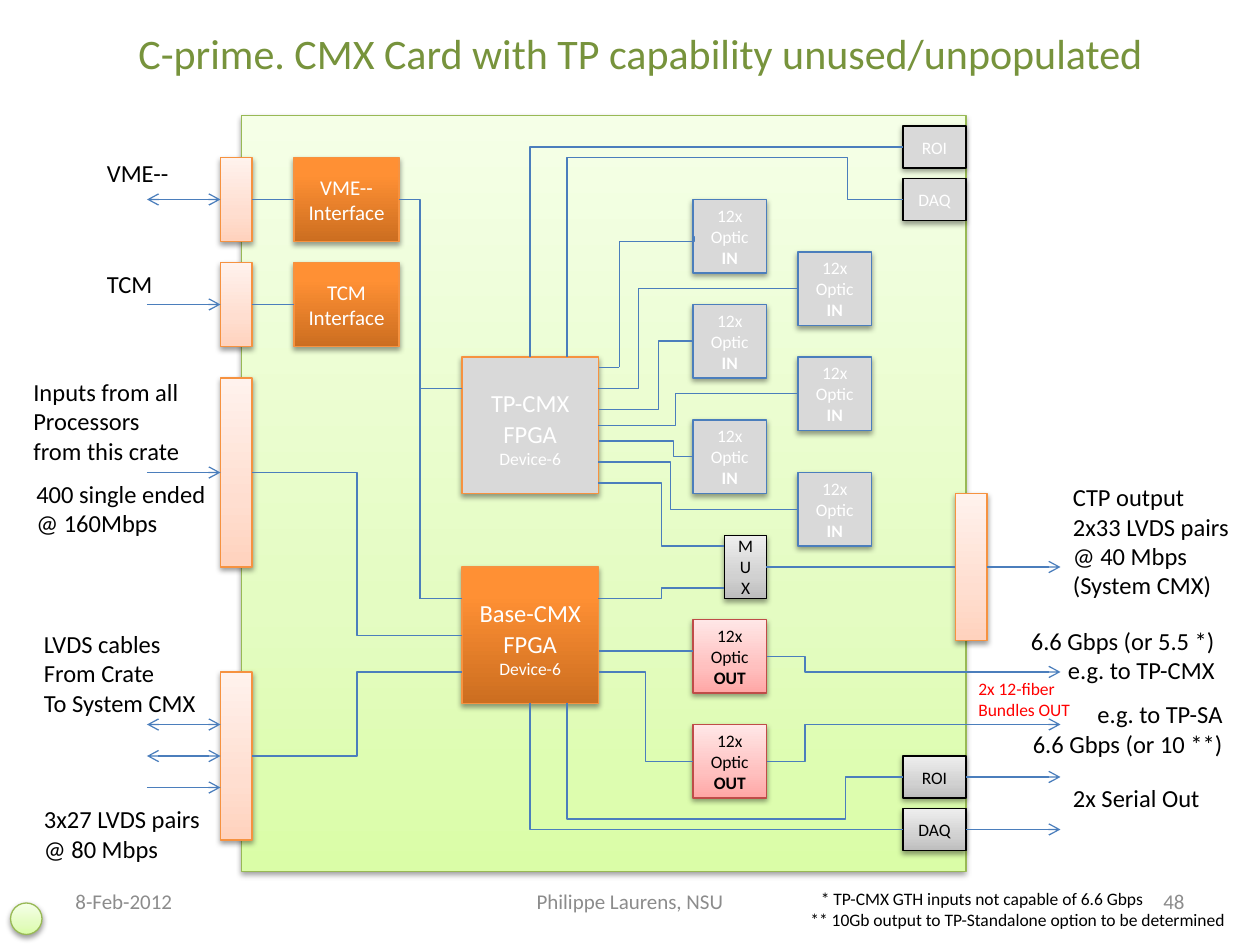
from lxml import etree
from pptx import Presentation
from pptx.dml.color import RGBColor
from pptx.enum.shapes import MSO_CONNECTOR, MSO_SHAPE
from pptx.enum.text import MSO_ANCHOR, MSO_AUTO_SIZE, PP_ALIGN
from pptx.oxml.ns import qn
from pptx.util import Pt

COLORS = {
    "wire": "4B7EBC", "orange": "F69240", "green": "98B955", "red": "BF4C48",
    "black": "000000", "white": "FFFFFF", "unused": "D9D9D9",
    "title": "77933C", "note": "FF0000", "footer": "8C8C8C",
}
GRADIENTS = {
    "board": [(0, "DAFDA7"), (35, "E4FCC2"), (100, "F5FFE7")],
    "port": [(0, "FFD2BD"), (35, "FFDED0"), (100, "FFF2ED")],
    "active": [(0, "CC6E20"), (80, "FF9034"), (100, "FF9136")],
    "output": [(0, "FFA6A5"), (35, "FFC0BF"), (100, "FFE7E7")],
    "link": [(0, "BDBDBD"), (35, "D1D1D1"), (100, "EEEEEE")],
}
LEFT, CENTER, RIGHT = PP_ALIGN.LEFT, PP_ALIGN.CENTER, PP_ALIGN.RIGHT

deck = Presentation()
deck.slide_width, deck.slide_height = Pt(720), Pt(540)
page = deck.slides.add_slide(deck.slide_layouts[6])


def write(frame, lines, color):
    """Fill a frame; each line is (alignment, [(text, size, bold), ...])."""
    for index, (align, spans) in enumerate(lines):
        para = frame.paragraphs[0] if index == 0 else frame.add_paragraph()
        para.alignment = align
        for text, size, bold in spans:
            span = para.add_run()
            span.text = text
            span.font.name, span.font.size, span.font.bold = "Calibri", Pt(size), bold
            span.font.color.rgb = RGBColor.from_string(COLORS[color])


def style_wire(wire, ends):
    """Colour a connector, drop its shadow and add open arrowheads."""
    wire.line.color.rgb = RGBColor.from_string(COLORS["wire"])
    wire.line.width = Pt(0.75)
    properties = wire._element.spPr
    etree.SubElement(properties, qn("a:effectLst"))
    for end in ends:
        etree.SubElement(properties.find(qn("a:ln")), qn("a:" + end), type="arrow")


# Contents of the boxes
optic_in, optic_out = [
    [(CENTER, [("12x Optic ", 10, False), (name, 10, True)])] for name in ("IN", "OUT")]
fpga_tp, fpga_base = [
    [(CENTER, [(name, 14, False), (" ", 18, False), ("FPGA", 14, False)]),
     (CENTER, [("Device-6", 10, False)])] for name in ("TP-CMX", "Base-CMX")]
vme, tcm = [[(CENTER, [(name + " Interface", 12, False)])] for name in ("VME--", "TCM")]
mux, roi, daq = [[(CENTER, [(name, 10, False)])] for name in ("MUX", "ROI", "DAQ")]

# Boxes: left, top, width, height, fill, line, text colour, lines
boxes = [(138, 66, 414, 432, "board", "green", "black", [])]
boxes += [(left, top, 18, height, "port", "orange", "black", [])
          for left, top, height in [(126, 90, 48), (126, 150, 48), (126, 216, 108),
                                    (126, 384, 96), (546, 282, 84)]]
boxes += [
    (168, 90, 60, 48, "active", "orange", "white", vme),
    (168, 150, 60, 48, "active", "orange", "white", tcm),
    (264, 204, 78, 78, "unused", "orange", "white", fpga_tp),
    (264, 324, 78, 78, "active", "orange", "white", fpga_base),
    (414, 306, 24, 36, "link", "black", "black", mux),
    (516, 72, 36, 24, "unused", "black", "white", roi),
    (516, 102, 36, 24, "unused", "black", "white", daq),
    (516, 432, 36, 24, "link", "black", "black", roi),
    (516, 462, 36, 24, "link", "black", "black", daq),
]
boxes += [(left, top, 42, 42, "unused", "wire", "white", optic_in)
          for left, top in [(396, 114), (396, 174), (396, 240),
                            (456, 144), (456, 204), (456, 270)]]
boxes += [(396, top, 42, 42, "output", "red", "black", optic_out) for top in (354, 414)]
boxes.append((6, 516, 18, 18, "board", "green", "black", []))  # corner dot

side_middles = {}
for left, top, width, height, fill, line, ink, lines in boxes:
    kind = MSO_SHAPE.OVAL if left == 6 else MSO_SHAPE.RECTANGLE
    box = page.shapes.add_shape(kind, Pt(left), Pt(top), Pt(width), Pt(height))
    if fill in GRADIENTS:
        box.fill.gradient()
        box.fill.gradient_angle = 90
        stops = box._element.spPr.find(".//" + qn("a:gsLst"))
        stops.clear()
        for position, color in GRADIENTS[fill]:
            stop = etree.SubElement(stops, qn("a:gs"), pos=str(position * 1000))
            etree.SubElement(stop, qn("a:srgbClr"), val=color)
    else:
        box.fill.solid()
        box.fill.fore_color.rgb = RGBColor.from_string(COLORS[fill])
    box.line.color.rgb = RGBColor.from_string(COLORS[line])
    box.line.width = Pt(0.75)
    # Soft shadow below the box
    box.shadow.inherit = False
    shadow = etree.SubElement(
        box._element.spPr.find(qn("a:effectLst")), qn("a:outerShdw"),
        blurRad=str(Pt(3.1)), dist=str(Pt(1.6)), dir="5400000", rotWithShape="0")
    shade = etree.SubElement(shadow, qn("a:srgbClr"), val=COLORS["black"])
    etree.SubElement(shade, qn("a:alpha"), val="38000")
    box.text_frame.word_wrap = True
    box.text_frame.vertical_anchor = MSO_ANCHOR.MIDDLE
    write(box.text_frame, lines, ink)
    middle_x, middle_y = left + width / 2, top + height / 2
    for site, point in enumerate([(middle_x, top), (left, middle_y),
                                  (middle_x, top + height), (left + width, middle_y)]):
        side_middles[point] = (box, site)

# Straight wires: x1, y1, x2, y2, arrowheads
forward, both = ["tailEnd"], ["headEnd", "tailEnd"]
straight = [(342, 210, 354, 210, []), (354, 210, 354, 138, []),
            (144, 114, 168, 114, []), (144, 174, 168, 174, []),
            (240, 222, 264, 222, []), (240, 342, 264, 342, []),
            (438, 324, 546, 324, []), (396, 372, 342, 372, []),
            (564, 324, 606, 324, forward)]
straight += [(552, y, 606, y, forward) for y in (444, 474)]
straight += [(84, y, 126, y, both) for y in (114, 414, 432)]
straight += [(84, y, 126, y, forward) for y in (174, 270, 450)]
for x1, y1, x2, y2, ends in straight:
    wire = page.shapes.add_connector(MSO_CONNECTOR.STRAIGHT, Pt(x1), Pt(y1), Pt(x2), Pt(y2))
    if (x1, y1) in side_middles:
        wire.begin_connect(*side_middles[x1, y1])
    if (x2, y2) in side_middles:
        wire.end_connect(*side_middles[x2, y2])
    style_wire(wire, ends)

# Bent wires: x1, y1, x of the bend, x2, y2, arrowheads
bent = [
    (342, 384, 369, 396, 435, []), (342, 276, 378, 414, 312, []),
    (342, 342, 378, 414, 336, []), (438, 375, 460, 606, 384, forward),
    (438, 435, 460, 606, 414, forward), (342, 252, 384.7, 396, 261, []),
    (342, 243, 385.9, 456, 225, []), (342, 234, 376.2, 396, 195, []),
    (342, 222, 364.9, 456, 165, []), (342, 264, 383.3, 456, 291, []),
    (354, 138, 396.6, 396, 135, []), (144, 270, 204, 264, 363, []),
    (144, 432, 204, 264, 384, []), (450, 468, 483, 516, 444, []),
    (516, 114, 484.5, 432, 90, []),
    # Single corner: the bend lies at the far end
    (228, 114, 240, 240, 342, []), (516, 474, 303, 303, 402, []),
    (450, 468, 324, 324, 402, []), (516, 84, 303, 303, 204, []),
    (432, 90, 324, 324, 204, []),
]
for x1, y1, bend, x2, y2, ends in bent:
    wire = page.shapes.add_connector(MSO_CONNECTOR.ELBOW, Pt(x1), Pt(y1), Pt(x2), Pt(y2))
    outline = wire._element.spPr.find(qn("a:prstGeom"))
    if bend == x2:
        outline.set("prst", "bentConnector2")
    else:
        share = round((bend - x1) / (x2 - x1) * 100000)
        guides = outline.find(qn("a:avLst"))
        etree.SubElement(guides, qn("a:gd"), name="adj1", fmla=f"val {share}")
    style_wire(wire, ends)

# Labels: left, top, width, height, size, colour, (alignment, text) lines
labels = [
    (72, 12, 594, 36, 24, "title",
     [(LEFT, "C-prime. CMX Card with TP capability unused/unpopulated")]),
    (54, 87, 50.4, 24.2, 14, "black", [(LEFT, "VME--")]),
    (54, 150, 41, 24.2, 14, "black", [(LEFT, "TCM")]),
    (12, 211.8, 98.6, 58.2, 14, "black",
     [(LEFT, "Inputs from all"), (LEFT, "Processors"), (LEFT, "from this crate")]),
    (13.7, 270, 112.3, 41.2, 14, "black", [(LEFT, "400 single ended"), (LEFT, "@ 160Mbps")]),
    (18, 355.8, 105.1, 58.2, 14, "black",
     [(LEFT, "LVDS cables"), (LEFT, "From Crate"), (LEFT, "To System CMX")]),
    (18, 456, 104.4, 41.2, 14, "black", [(LEFT, "3x27 LVDS pairs"), (LEFT, "@ 80 Mbps")]),
    (606, 272, 105.8, 75.1, 14, "black",
     [(LEFT, "CTP output"), (LEFT, "2x33 LVDS pairs"),
      (LEFT, "@ 40 Mbps"), (LEFT, "(System CMX)")]),
    (552, 384, 67.7, 31.5, 10, "note", [(LEFT, "2x 12-fiber"), (LEFT, "Bundles OUT")]),
    (582, 354, 120.2, 41.2, 14, "black",
     [(LEFT, "6.6 Gbps (or 5.5 *)"), (RIGHT, "e.g. to TP-CMX")]),
    (582, 396, 123.8, 41.2, 14, "black",
     [(RIGHT, "e.g. to TP-SA"), (RIGHT, "6.6 Gbps (or 10 **)")]),
    (606, 444, 92.2, 24.2, 14, "black", [(LEFT, "2x Serial Out")]),
    (462, 504, 200.9, 19.4, 10, "black",
     [(LEFT, "* TP-CMX GTH inputs not capable of 6.6 Gbps")]),
    (456, 516, 252.7, 19.4, 10, "black",
     [(LEFT, "** 10Gb output to TP-Standalone option to be determined")]),
    (36, 500.5, 168, 28.8, 12, "footer", [(LEFT, "8-Feb-2012")]),
    (246, 500.5, 228, 28.8, 12, "footer", [(CENTER, "Philippe Laurens, NSU")]),
    (516, 500.5, 168, 28.8, 12, "footer", [(RIGHT, "48")]),
]
for left, top, width, height, size, ink, lines in labels:
    frame = page.shapes.add_textbox(Pt(left), Pt(top), Pt(width), Pt(height)).text_frame
    frame.word_wrap = ink == "footer"
    if ink == "footer":
        frame.vertical_anchor = MSO_ANCHOR.MIDDLE
    else:
        frame.auto_size = MSO_AUTO_SIZE.SHAPE_TO_FIT_TEXT
    write(frame, [(align, [(text, size, False)]) for align, text in lines], ink)

deck.save("out.pptx")
